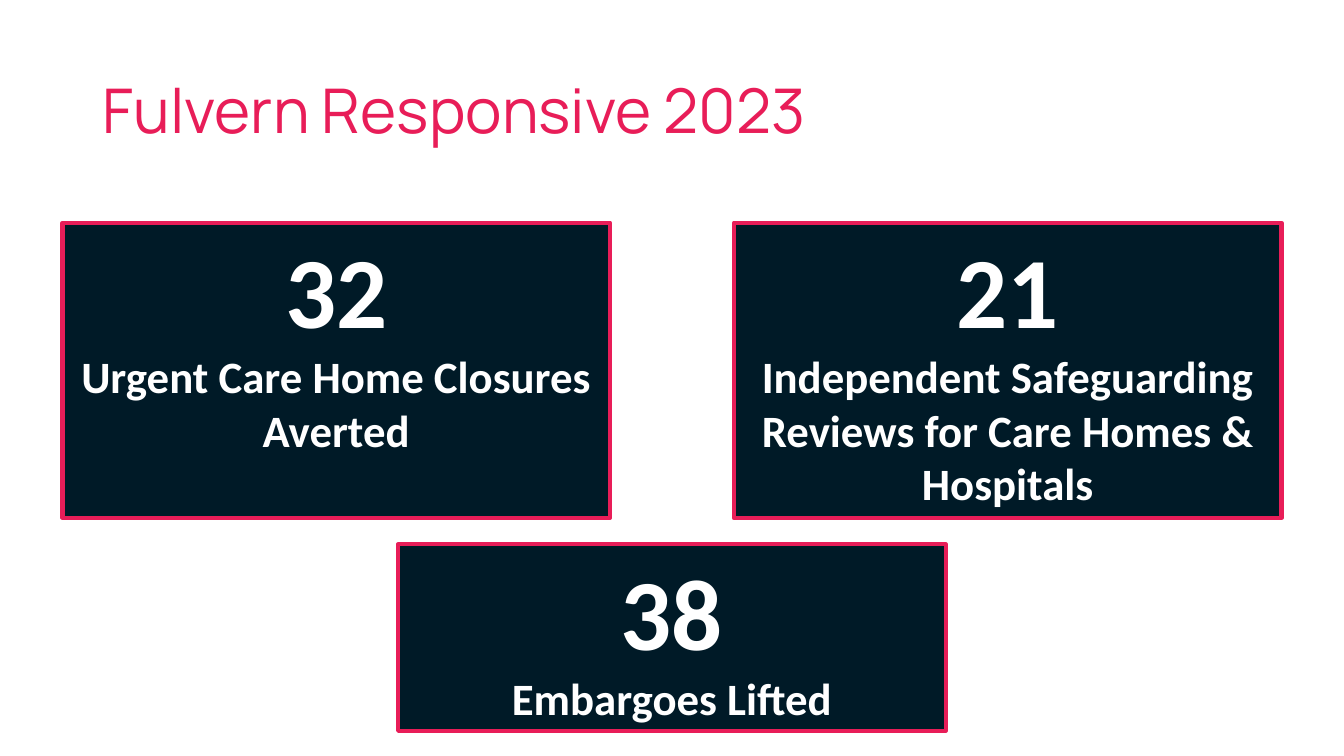
from dataclasses import dataclass

from pptx import Presentation
from pptx.dml.color import RGBColor
from pptx.enum.shapes import MSO_SHAPE
from pptx.enum.text import MSO_ANCHOR, PP_ALIGN
from pptx.slide import Slide
from pptx.util import Inches, Pt

RECTANGLE = MSO_SHAPE.RECTANGLE
TOP, MIDDLE = MSO_ANCHOR.TOP, MSO_ANCHOR.MIDDLE
LEFT, CENTER = PP_ALIGN.LEFT, PP_ALIGN.CENTER

PINK = RGBColor(0xE8, 0x1D, 0x58)
NAVY = RGBColor(0x00, 0x1A, 0x27)
WHITE = RGBColor(0xFF, 0xFF, 0xFF)

TITLE_FORMAT = {"name": "Manrope", "size": Pt(44), "bold": False}
FIGURE_FORMAT = {"name": "Calibri", "size": Pt(72), "bold": True}
LABEL_FORMAT = {"name": "Calibri", "size": Pt(32), "bold": True}

CARD_WIDTH = 5.43


@dataclass(frozen=True)
class Card:
    figure: str
    label: str
    left: float
    top: float
    height: float


CARDS = [
    Card("32", "Urgent Care Home Closures Averted", 0.62, 2.21, 2.93),
    Card("21", "Independent Safeguarding Reviews for Care Homes & Hospitals",
         7.28, 2.21, 2.93),
    Card("38", "Embargoes Lifted", 3.95, 5.4, 1.85),
]


def write_paragraph(paragraph, text: str, font_format: dict,
                    color: RGBColor, alignment: PP_ALIGN) -> None:
    paragraph.alignment = alignment
    run = paragraph.add_run()
    run.text = text
    for attribute, value in font_format.items():
        setattr(run.font, attribute, value)
    run.font.color.rgb = color


def add_title(slide: Slide, text: str) -> None:
    title = slide.shapes.title
    title.left, title.top = Inches(0.92), Inches(0.4)
    title.width, title.height = Inches(11.5), Inches(1.45)
    title.text_frame.vertical_anchor = MIDDLE
    paragraph = title.text_frame.paragraphs[0]
    paragraph.line_spacing = 0.9
    write_paragraph(paragraph, text, TITLE_FORMAT, PINK, LEFT)


def add_card(slide: Slide, card: Card) -> None:
    shape = slide.shapes.add_shape(
        RECTANGLE, Inches(card.left), Inches(card.top),
        Inches(CARD_WIDTH), Inches(card.height))
    shape.shadow.inherit = False
    shape.fill.solid()
    shape.fill.fore_color.rgb = NAVY
    shape.line.color.rgb = PINK
    shape.line.width = Pt(3)

    frame = shape.text_frame
    frame.word_wrap = True
    frame.vertical_anchor = TOP
    write_paragraph(frame.paragraphs[0], card.figure, FIGURE_FORMAT, WHITE, CENTER)
    write_paragraph(frame.add_paragraph(), card.label, LABEL_FORMAT, WHITE, CENTER)


def main() -> None:
    presentation = Presentation()
    presentation.slide_width = Inches(13.33)
    presentation.slide_height = Inches(7.5)
    title_only_layout = presentation.slide_layouts[5]
    slide = presentation.slides.add_slide(title_only_layout)

    # Heading
    add_title(slide, "Fulvern Responsive 2023")

    # Key figures
    for card in CARDS:
        add_card(slide, card)

    presentation.save("out.pptx")


if __name__ == "__main__":
    main()
